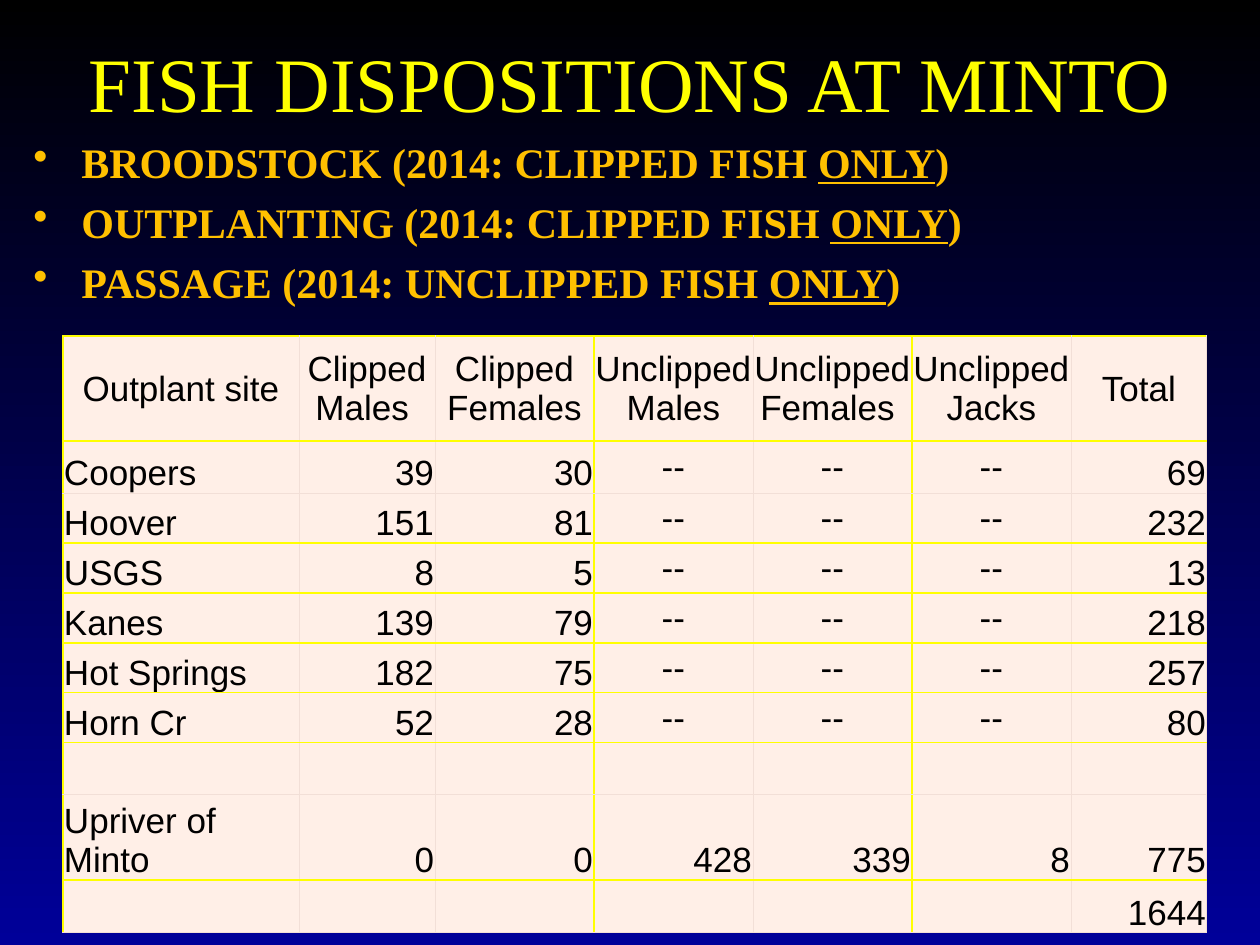
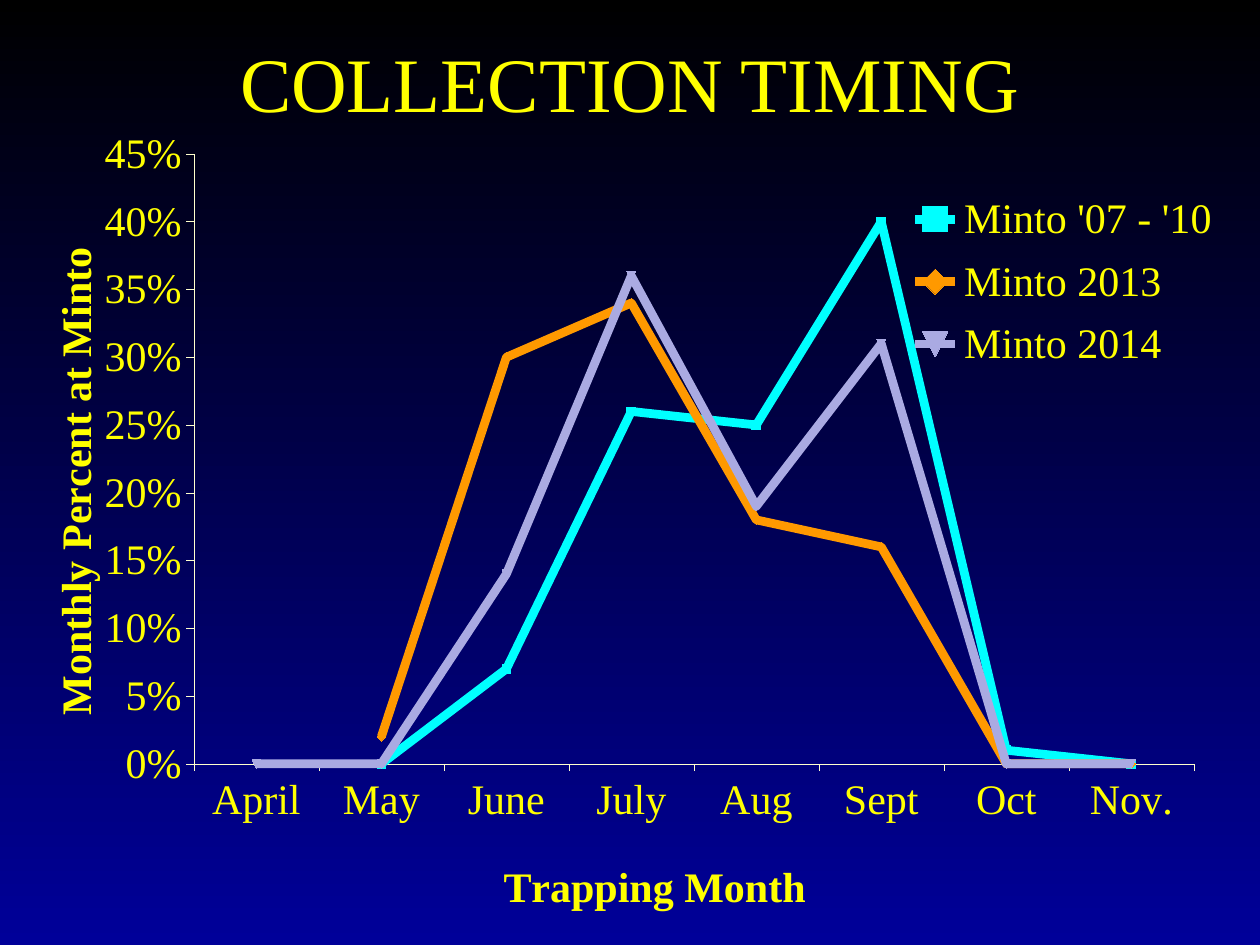
"""Build two slides on fish dispositions and collection timing at Minto."""
import pptx
import pptx.chart.data
import pptx.dml.color
import pptx.enum.chart
import pptx.enum.text
import pptx.oxml
import pptx.oxml.ns
import pptx.util

PX = 7257
SERIF, SANS = "Times New Roman", "Arial"
COLORS = {
    "top": "000000", "bottom": "000099", "title": "FFFF00", "bullet": "FFC000",
    "cell": "FFEFE7", "cell_text": "000000", "rule": "FFFF00", "faint": "F2DFD7",
    "axis": "FFFFCC", "cyan": "00FFFF", "orange": "FF9900", "lavender": "AAAAE2",
}
RGB = {name: pptx.dml.color.RGBColor.from_string(value) for name, value in COLORS.items()}
ALIGN = pptx.enum.text.PP_ALIGN
ANCHOR = pptx.enum.text.MSO_ANCHOR


def set_font(font, name, size, color, bold=False):
    font.name, font.size, font.bold = name, pptx.util.Pt(size), bold
    font.color.rgb = RGB[color]


def set_layout(element, index, inner=False, **fractions):
    for old in element.findall(pptx.oxml.ns.qn("c:layout")):
        element.remove(old)
    target = '<c:layoutTarget val="inner"/>' if inner else ""
    modes = '<c:xMode val="edge"/><c:yMode val="edge"/>'
    values = "".join(f'<c:{key} val="{value}"/>' for key, value in fractions.items())
    element.insert(index, pptx.oxml.parse_xml(
        f'<c:layout {pptx.oxml.ns.nsdecls("c")}><c:manualLayout>'
        f"{target}{modes}{values}</c:manualLayout></c:layout>"))


presentation = pptx.Presentation()
presentation.slide_width, presentation.slide_height = 1260 * PX, 945 * PX

slides = []
for title in ("FISH DISPOSITIONS AT MINTO", "COLLECTION TIMING"):
    slide = presentation.slides.add_slide(presentation.slide_layouts[6])
    background = slide.background.fill
    background.gradient()
    background.gradient_angle = 270
    for stop, position, color in zip(background.gradient_stops, (0, 1), ("top", "bottom")):
        stop.position, stop.color.rgb = position, RGB[color]
    frame = slide.shapes.add_textbox(63 * PX, 21 * PX, 1134 * PX, 158 * PX).text_frame
    frame.word_wrap = True
    frame.margin_top = 15 * PX
    paragraph = frame.paragraphs[0]
    paragraph.text = title
    paragraph.alignment = ALIGN.CENTER
    set_font(paragraph.font, SERIF, 44, "title")
    slides.append(slide)
disposition_slide, timing_slide = slides

frame = disposition_slide.shapes.add_textbox(21 * PX, 126 * PX, 1239 * PX, 231 * PX).text_frame
frame.word_wrap = True
frame.margin_top = 10 * PX
dispositions = [("BROODSTOCK", "CLIPPED"), ("OUTPLANTING", "CLIPPED"), ("PASSAGE", "UNCLIPPED")]
for index, (use, mark) in enumerate(dispositions):
    paragraph = frame.add_paragraph() if index else frame.paragraphs[0]
    properties = paragraph._p.get_or_add_pPr()
    properties.set("marL", str(48 * PX))
    properties.set("indent", str(-48 * PX))
    properties.append(pptx.oxml.parse_xml(
        f'<a:buChar {pptx.oxml.ns.nsdecls("a")} char="•"/>'))
    set_font(paragraph.font, SERIF, 24, "bullet", True)
    paragraph.space_before = 10 * PX if index else 0
    for text in (f"{use} (2014: {mark} FISH ", "ONLY", ")"):
        run = paragraph.add_run()
        run.text = text
        if text == "ONLY":
            run.font.underline = True

rows = [["Outplant site", "Clipped Males ", "Clipped Females", "Unclipped Males",
         "Unclipped Females ", "Unclipped Jacks", "Total"]]
for site, males, females in [("Coopers", 39, 30), ("Hoover", 151, 81), ("USGS", 8, 5),
                             ("Kanes", 139, 79), ("Hot Springs", 182, 75), ("Horn Cr", 52, 28)]:
    rows.append([site, males, females, "--", "--", "--", males + females])
rows += [[""] * 7, ["Upriver of Minto", 0, 0, 428, 339, 8, 775], [""] * 6 + [1644]]
column_widths = [236, 136, 159, 159, 159, 159, 136]
row_heights = [105, 52, 50, 50, 50, 50, 50, 52, 80, 53]
ruled_rows, ruled_columns = {-1, 0, 2, 3, 4, 5, 6, 8}, {-1, 2, 4}

table = disposition_slide.shapes.add_table(
    len(rows), len(column_widths), 63 * PX, 336 * PX,
    sum(column_widths) * PX, sum(row_heights) * PX).table
for column, width in zip(table.columns, column_widths):
    column.width = width * PX
for row, height in zip(table.rows, row_heights):
    row.height = height * PX
for row_index, row in enumerate(rows):
    for column_index, value in enumerate(row):
        cell = table.cell(row_index, column_index)
        cell.margin_left = cell.margin_right = cell.margin_top = PX
        cell.margin_bottom = 0
        cell.fill.solid()
        cell.fill.fore_color.rgb = RGB["cell"]
        centered = row_index == 0 or value == "--"
        cell.vertical_anchor = ANCHOR.MIDDLE if centered else ANCHOR.BOTTOM
        paragraph = cell.text_frame.paragraphs[0]
        paragraph.text = str(value)
        if centered:
            paragraph.alignment = ALIGN.CENTER
        else:
            paragraph.alignment = ALIGN.RIGHT if column_index else ALIGN.LEFT
        set_font(paragraph.font, SANS, 20, "cell_text")
        edges = {"L": column_index - 1 in ruled_columns, "R": column_index in ruled_columns,
                 "T": row_index - 1 in ruled_rows, "B": row_index in ruled_rows}
        for position, (side, ruled) in enumerate(edges.items()):
            width, color = (12700, "rule") if ruled else (6350, "faint")
            cell._tc.get_or_add_tcPr().insert(position, pptx.oxml.parse_xml(
                f'<a:ln{side} {pptx.oxml.ns.nsdecls("a")} w="{width}"><a:solidFill>'
                f'<a:srgbClr val="{COLORS[color]}"/></a:solidFill></a:ln{side}>'))

chart_data = pptx.chart.data.CategoryChartData(number_format="0%")
chart_data.categories = ["April", "May", "June", "July", "Aug", "Sept", "Oct", "Nov."]
chart_data.add_series("Minto '07 - '10", [None, 0, 0.07, 0.26, 0.25, 0.4, 0.01, 0])
chart_data.add_series("Minto 2013", [None, 0.02, 0.3, 0.34, 0.18, 0.16, 0, 0])
chart_data.add_series("Minto 2014", [0, 0, 0.14, 0.36, 0.19, 0.31, 0, 0])
chart = timing_slide.shapes.add_chart(
    pptx.enum.chart.XL_CHART_TYPE.LINE_MARKERS,
    21 * PX, 116 * PX, 1218 * PX, 809 * PX, chart_data).chart
set_font(chart.font, SERIF, 24, "title")
chart.has_title = False
chart.plots[0].vary_by_categories = False
set_layout(chart._chartSpace.chart.plotArea, 0, True, x=0.142, y=0.047, w=0.821, h=0.754)

for series, color in zip(chart.plots[0].series, ("cyan", "orange", "lavender")):
    series.smooth = False
    series.format.line.width = pptx.util.Pt(5)
    series.format.line.color.rgb = RGB[color]
    series.marker.size = 5
    series.marker.format.fill.solid()
    series.marker.format.fill.fore_color.rgb = RGB[color]
    series.marker.format.line.color.rgb = RGB[color]

for axis, title, left, top in [(chart.category_axis, "Trapping Month", 0.39, 0.91),
                               (chart.value_axis, "Monthly Percent at Minto", 0.016, 0.153)]:
    axis.has_major_gridlines = False
    axis.major_tick_mark = pptx.enum.chart.XL_TICK_MARK.OUTSIDE
    axis.format.line.color.rgb = RGB["axis"]
    axis.format.line.width = pptx.util.Pt(0.25)
    set_font(axis.tick_labels.font, SERIF, 24, "title")
    paragraph = axis.axis_title.text_frame.paragraphs[0]
    paragraph.text = title
    set_font(paragraph.font, SERIF, 24, "title", True)
    set_layout(axis.axis_title._element, 1, x=left, y=top)
chart.value_axis.axis_title.text_frame._txBody.bodyPr.set("rot", "-5400000")
chart.value_axis.minimum_scale, chart.value_axis.maximum_scale = 0, 0.45
chart.value_axis.major_unit = 0.05
chart.value_axis.tick_labels.number_format = "0%"
chart.value_axis.tick_labels.number_format_is_linked = False

chart.has_legend = True
chart.legend.position = pptx.enum.chart.XL_LEGEND_POSITION.RIGHT
chart.legend.include_in_layout = False
set_font(chart.legend.font, SERIF, 24, "title")
set_layout(chart.legend._element, 1, x=0.726, y=0.08, w=0.26, h=0.25)

presentation.save("out.pptx")
